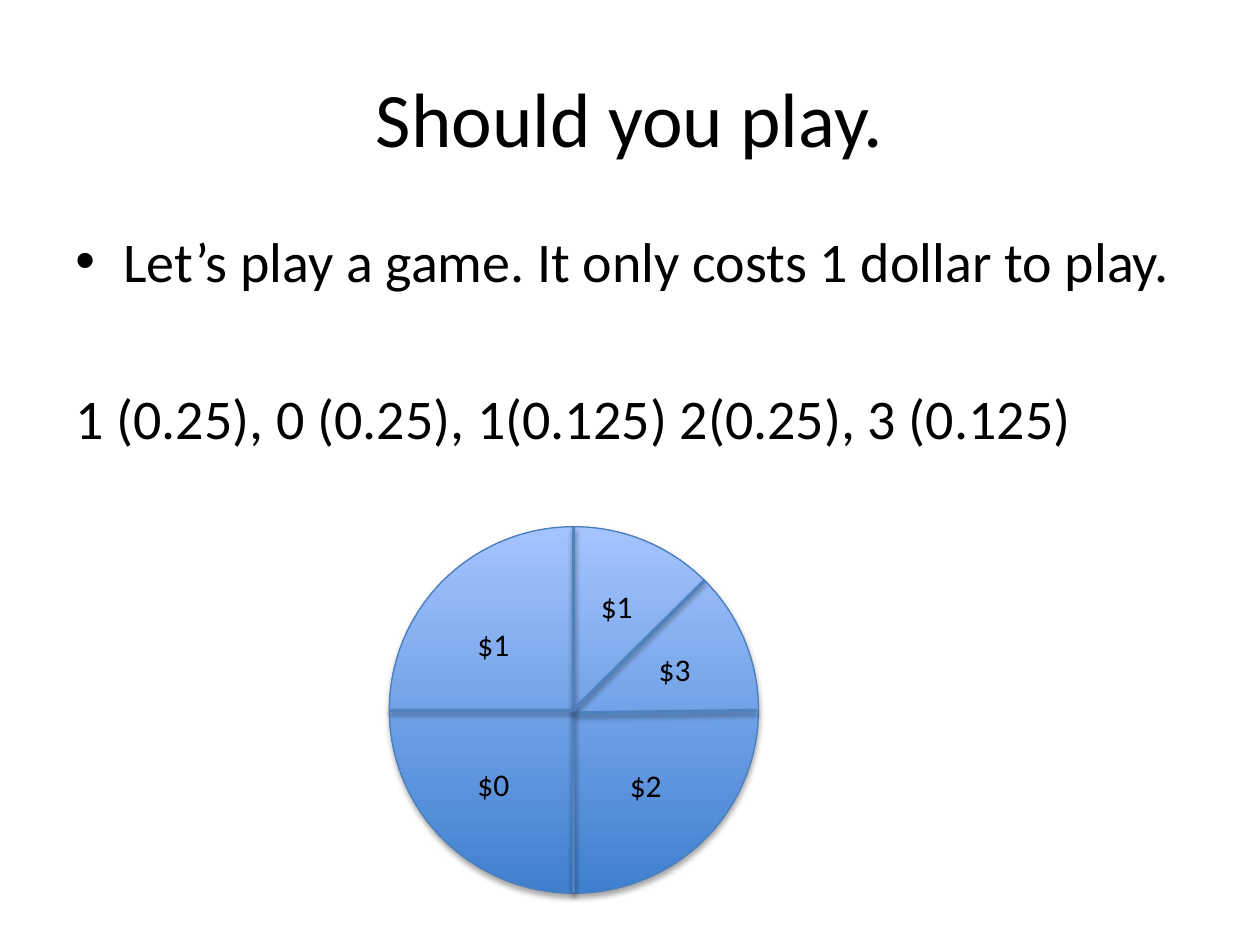
"""Build a slide about a spinner game and its payout odds."""
from lxml.etree import SubElement
from pptx import Presentation
from pptx.dml.color import RGBColor
from pptx.enum.shapes import MSO_CONNECTOR, MSO_SHAPE
from pptx.enum.text import MSO_ANCHOR, MSO_AUTO_SIZE, PP_ALIGN
from pptx.oxml.ns import qn
from pptx.util import Inches, Pt

COLORS = {
    "text": "000000",
    "wheel_bottom": "3F80CE",
    "wheel_top": "A4C4FF",
    "rim": "4B7EBC",
    "spoke": "4F81BD",
    "shadow": "000000",
}


def add_text(slide, box, lines, size):
    frame = slide.shapes.add_textbox(*map(Inches, box)).text_frame
    frame.word_wrap = True
    frame.text = "\n".join(lines)
    for paragraph in frame.paragraphs:
        paragraph.font.name = "Calibri"
        paragraph.font.size = Pt(size)
        paragraph.font.color.rgb = RGBColor.from_string(COLORS["text"])
    return frame


def add_shadow(shape, opacity, distance):
    effects = SubElement(shape._element.spPr, qn("a:effectLst"))
    shadow = SubElement(effects, qn("a:outerShdw"), blurRad=str(Pt(3.1)),
                        dist=str(Pt(distance)), dir="5400000", rotWithShape="0")
    color = SubElement(shadow, qn("a:srgbClr"), val=COLORS["shadow"])
    SubElement(color, qn("a:alpha"), val=str(opacity * 1000))


prs = Presentation()
prs.slide_width, prs.slide_height = Inches(10), Inches(7.5)
slide = prs.slides.add_slide(prs.slide_layouts[6])

title = add_text(slide, (0.5, 0.3, 9, 1.25), ["Should you play."], 44)
title.vertical_anchor = MSO_ANCHOR.MIDDLE
title.paragraphs[0].alignment = PP_ALIGN.CENTER

body = add_text(slide, (0.5, 1.75, 9, 4.95), [
    "Let’s play a game. It only costs 1 dollar to play.",
    "1 (0.25), 0 (0.25), 1(0.125) 2(0.25), 3 (0.125)",
], 32)
invitation, odds = body.paragraphs
bullet_format = invitation._p.get_or_add_pPr()
bullet_format.set("marL", str(Inches(0.38)))
bullet_format.set("indent", str(Inches(-0.38)))
SubElement(bullet_format, qn("a:buFont"), typeface="Arial")
SubElement(bullet_format, qn("a:buChar"), char="•")
bullet_format.append(bullet_format.find(qn("a:defRPr")))
odds.space_before = Pt(51)

wheel = slide.shapes.add_shape(
    MSO_SHAPE.OVAL, Inches(3.09), Inches(4.18), Inches(2.93), Inches(2.91))
wheel.fill.gradient()
wheel.fill.gradient_angle = 90
for stop, shade in zip(wheel.fill.gradient_stops, ("wheel_bottom", "wheel_top")):
    stop.color.rgb = RGBColor.from_string(COLORS[shade])
wheel.line.color.rgb = RGBColor.from_string(COLORS["rim"])
wheel.line.width = Pt(0.75)
add_shadow(wheel, 35, 1.8)

for ends in [
    (4.55, 4.18, 4.55, 7.09),
    (4.55, 5.66, 6.01, 5.64),
    (4.55, 5.64, 5.59, 4.61),
    (4.55, 5.64, 3.09, 5.64),
]:
    spoke = slide.shapes.add_connector(MSO_CONNECTOR.STRAIGHT, *map(Inches, ends))
    spoke.line.color.rgb = RGBColor.from_string(COLORS["spoke"])
    spoke.line.width = Pt(2)
    add_shadow(spoke, 38, 1.6)

for payout, left, top in [
    ("$1", 3.69, 4.91),
    ("$1", 4.67, 4.61),
    ("$2", 4.9, 6.03),
    ("$3", 5.13, 5.11),
    ("$0", 3.69, 6.02),
]:
    payout_label = add_text(slide, (left, top, 0.46, 0.4), [payout], 18)
    payout_label.word_wrap = False
    payout_label.auto_size = MSO_AUTO_SIZE.SHAPE_TO_FIT_TEXT

prs.save("out.pptx")
